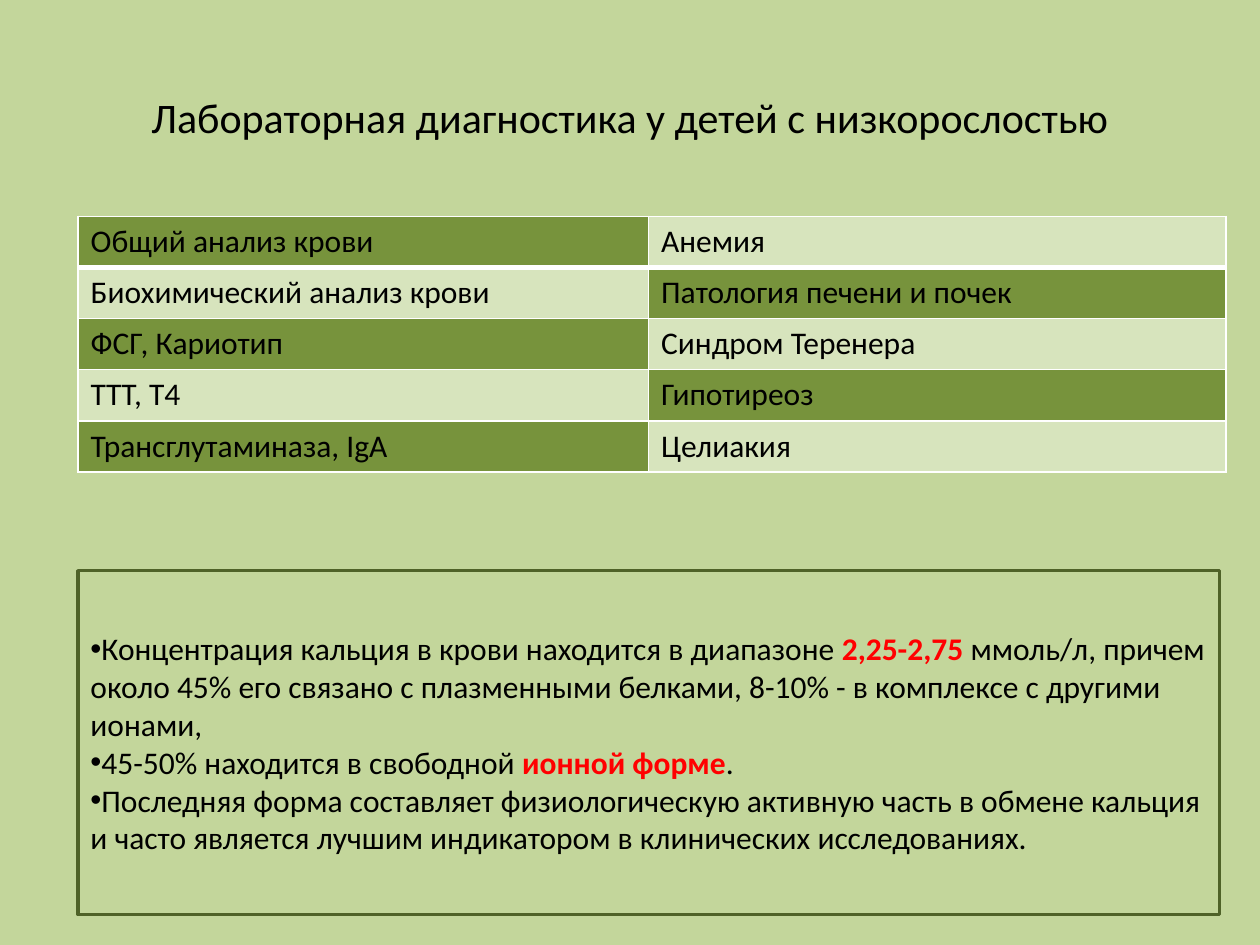
from typing import NamedTuple

from lxml import etree
from pptx import Presentation
from pptx import util as u
from pptx.dml.color import RGBColor
from pptx.enum import shapes, text
from pptx.oxml import ns

FACE = "Calibri"
BLACK, RED, WHITE = "000000", "FF0000", "FFFFFF"
BACK, DARK, PALE, EDGE = "C3D69B", "77933C", "D7E4BD", "4F6228"
WIDE, HIGH = u.Inches(10), u.Inches(7.5)


class Area(NamedTuple):
    left: float
    top: float
    width: float
    height: float

    def place(self) -> list[int]:
        sizes = (WIDE, HIGH, WIDE, HIGH)
        return [round(part * size) for part, size in zip(self, sizes)]


class Piece(NamedTuple):
    words: str
    key: bool = False


TITLE = Area(0.05, 0.04, 0.9, 0.168)
TABLE = Area(0.062, 0.229, 0.911, 0.27)
PANEL = Area(0.062, 0.604, 0.906, 0.364)
SPLIT = (0.497, 0.503)

TESTS = [
    ("Общий анализ крови", "Анемия"),
    ("Биохимический анализ крови", "Патология печени и почек"),
    ("ФСГ, Кариотип", "Синдром Теренера"),
    ("ТТТ, Т4", "Гипотиреоз"),
    ("Трансглутаминаза, IgA", "Целиакия"),
]

NOTES = [
    [
        Piece("Концентрация кальция в крови находится в диапазоне "),
        Piece("2,25-2,75 ", True),
        Piece("ммоль/л, причем около 45% его связано с плазменными белками, "
              "8-10% - в комплексе с другими ионами,"),
    ],
    [
        Piece("45-50% находится в свободной "),
        Piece("ионной форме", True),
        Piece("."),
    ],
    [
        Piece("Последняя форма составляет физиологическую активную часть в "
              "обмене кальция и часто является лучшим индикатором в "
              "клинических исследованиях."),
    ],
]


def paint(target, tone: str) -> None:
    target.solid()
    target.fore_color.rgb = RGBColor.from_string(tone)


def style(font, size: float, tone: str = BLACK, bold: bool = False) -> None:
    font.name, font.size, font.bold = FACE, u.Pt(size), bold
    paint(font.fill, tone)


def node(parent, tag: str, **attrs: str):
    return etree.SubElement(parent, ns.qn(tag), attrs)


def border(cell, side: str, width: float) -> None:
    line = node(cell._tc.get_or_add_tcPr(), f"a:ln{side}", w=str(u.Pt(width)))
    node(node(line, "a:solidFill"), "a:srgbClr", val=WHITE)


def head(slide, words: str) -> None:
    title = slide.shapes.title
    title.left, title.top, title.width, title.height = TITLE.place()
    frame = title.text_frame
    frame.text = words
    frame.vertical_anchor = text.MSO_ANCHOR.MIDDLE
    line = frame.paragraphs[0]
    line.alignment = text.PP_ALIGN.CENTER
    style(line.font, 24)


def grid(slide) -> None:
    area = TABLE.place()
    table = slide.shapes.add_table(len(TESTS), len(SPLIT), *area).table
    for col, share in zip(table.columns, SPLIT):
        col.width = round(area[2] * share)
    for r, row in enumerate(TESTS):
        for c, words in enumerate(row):
            cell = table.cell(r, c)
            for side in "LRTB":
                thick = (r, side) in ((0, "B"), (1, "T"))
                border(cell, side, 3 if thick else 1)
            paint(cell.fill, PALE if (r + c) % 2 else DARK)
            cell.text = words
            style(cell.text_frame.paragraphs[0].font, 18)


def panel(slide) -> None:
    box = slide.shapes.add_shape(shapes.MSO_SHAPE.RECTANGLE, *PANEL.place())
    box.shadow.inherit = False
    paint(box.fill, BACK)
    paint(box.line.fill, EDGE)
    box.line.width = u.Pt(2)
    frame = box.text_frame
    frame.word_wrap = True
    frame.vertical_anchor = text.MSO_ANCHOR.MIDDLE
    for i, note in enumerate(NOTES):
        line = frame.add_paragraph() if i else frame.paragraphs[0]
        line.alignment = text.PP_ALIGN.LEFT
        props = line._p.get_or_add_pPr()
        node(props, "a:buFont", typeface="Arial")
        node(props, "a:buChar", char="•")
        style(line.font, 18)
        for piece in note:
            run = line.add_run()
            run.text = piece.words
            style(run.font, 18, RED if piece.key else BLACK, piece.key)


def main() -> None:
    deck = Presentation()
    deck.slide_width, deck.slide_height = WIDE, HIGH
    slide = deck.slides.add_slide(deck.slide_layouts[5])
    paint(slide.background.fill, BACK)
    head(slide, "Лабораторная диагностика у детей с низкорослостью")
    grid(slide)
    panel(slide)
    deck.save("out.pptx")


if __name__ == "__main__":
    main()
